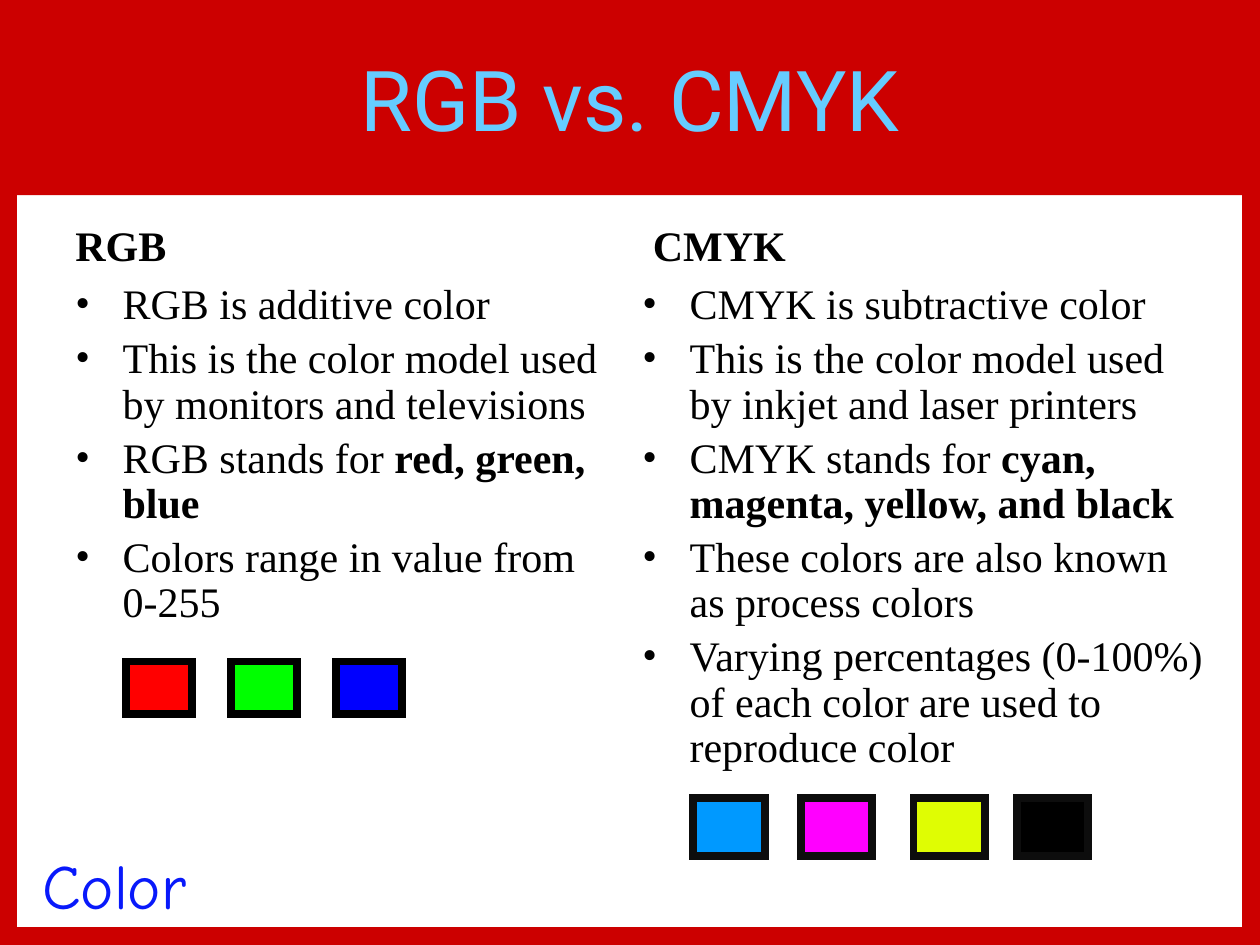
from lxml.etree import SubElement
from pptx import Presentation
from pptx.dml.color import RGBColor
from pptx.enum.shapes import MSO_SHAPE as SHAPE
from pptx.enum.text import MSO_ANCHOR as ANCHOR, PP_ALIGN as ALIGN
from pptx.oxml.ns import qn
from pptx.util import Pt

RED = RGBColor(0xCC, 0x00, 0x00)
SKY = RGBColor(0x66, 0xCC, 0xFF)
INK_BLUE = RGBColor(0x08, 0x19, 0xFB)
BLACK = RGBColor(0x00, 0x00, 0x00)
NEAR_BLACK = RGBColor(0x0D, 0x0D, 0x0D)
WHITE = RGBColor(0xFF, 0xFF, 0xFF)
PURE_RED = RGBColor(0xFF, 0x00, 0x00)
PURE_GREEN = RGBColor(0x00, 0xFF, 0x00)
PURE_BLUE = RGBColor(0x00, 0x00, 0xFF)
CYAN = RGBColor(0x00, 0x99, 0xFF)
MAGENTA = RGBColor(0xFF, 0x00, 0xFF)
YELLOW = RGBColor(0xDF, 0xFD, 0x03)

prs = Presentation()
prs.slide_width, prs.slide_height = Pt(720), Pt(540)
s = prs.slides.add_slide(prs.slide_layouts[6])
s.background.fill.solid()
s.background.fill.fore_color.rgb = WHITE


def add_rect(left, top, width, height, fill=None, line=None, weight=0):
    """Add a rectangle; without a fill or line colour that part is empty."""
    sp = s.shapes.add_shape(SHAPE.RECTANGLE, Pt(left), Pt(top), Pt(width), Pt(height))
    sp.shadow.inherit = False
    if fill is None:
        sp.fill.background()
    else:
        sp.fill.solid()
        sp.fill.fore_color.rgb = fill
    if line is None:
        sp.line.fill.background()
    else:
        sp.line.color.rgb = line
        sp.line.width = Pt(weight)
        SubElement(sp.line._get_or_add_ln(), qn("a:miter"), lim="800000")
    return sp


def add_run(p, text, font, size, color, bold=False):
    r = p.add_run()
    r.text = text
    r.font.name, r.font.size, r.font.bold = font, Pt(size), bold
    r.font.color.rgb = color


# Frame, section label and title band
add_rect(0, 0, 720, 540, line=RED, weight=20)

tf = s.shapes.add_textbox(Pt(12), Pt(480), Pt(106.5), Pt(48)).text_frame
tf.word_wrap = False
tf.paragraphs[0].alignment = ALIGN.CENTER
add_run(tf.paragraphs[0], "Color", "Comic Neue", 36, INK_BLUE)

tf = add_rect(0, 0, 720, 111.5, fill=RED).text_frame
tf.vertical_anchor = ANCHOR.MIDDLE
tf.paragraphs[0].alignment = ALIGN.CENTER
add_run(tf.paragraphs[0], "RGB vs. CMYK", "Roboto", 48, SKY)

# Two columns: heading, then bullets of (plain text, bold ending)
columns = [
    ("RGB", 36, 36, 318, [
        ("RGB is additive color", ""),
        ("This is the color model used by monitors and televisions", ""),
        ("RGB stands for ", "red, green, blue"),
        ("Colors range in value from 0-255", ""),
    ]),
    ("CMYK", 366, 360, 336, [
        ("CMYK is subtractive color", ""),
        ("This is the color model used by inkjet and laser printers", ""),
        ("CMYK stands for ", "cyan, magenta, yellow, and black"),
        ("These colors are also known as process colors", ""),
        ("Varying percentages (0-100%) of each color are used to reproduce color", ""),
    ]),
]
for heading, heading_left, list_left, list_width, bullets in columns:
    tf = s.shapes.add_textbox(Pt(heading_left), Pt(108), Pt(318), Pt(50.4)).text_frame
    tf.word_wrap = True
    tf.vertical_anchor = ANCHOR.BOTTOM
    p = tf.paragraphs[0]
    p.line_spacing, p.space_before = 0.9, Pt(5)
    add_run(p, heading, "Times New Roman", 24, BLACK, bold=True)

    tf = s.shapes.add_textbox(Pt(list_left), Pt(158.4), Pt(list_width), Pt(310)).text_frame
    tf.word_wrap = True
    for i, (plain, strong) in enumerate(bullets):
        p = tf.paragraphs[0] if i == 0 else tf.add_paragraph()
        p.line_spacing, p.space_before = 0.9, Pt(5)
        pPr = p._p.get_or_add_pPr()
        pPr.set("marL", str(Pt(27)))
        pPr.set("indent", str(-Pt(27)))
        SubElement(pPr, qn("a:buFont"), typeface="Times New Roman")
        SubElement(pPr, qn("a:buChar"), char="•")
        add_run(p, plain, "Times New Roman", 24, BLACK)
        if strong:
            add_run(p, strong, "Times New Roman", 24, BLACK, bold=True)

# Colour swatches below each list
for i, color in enumerate([PURE_RED, PURE_GREEN, PURE_BLUE]):
    add_rect(72 + 60 * i, 378, 37.5, 30, color, BLACK, 4.5)
for left, color in [(396, CYAN), (457.5, MAGENTA), (522, YELLOW), (581, BLACK)]:
    add_rect(left, 456, 41, 33, color, NEAR_BLACK, 4.5)

prs.save("out.pptx")
